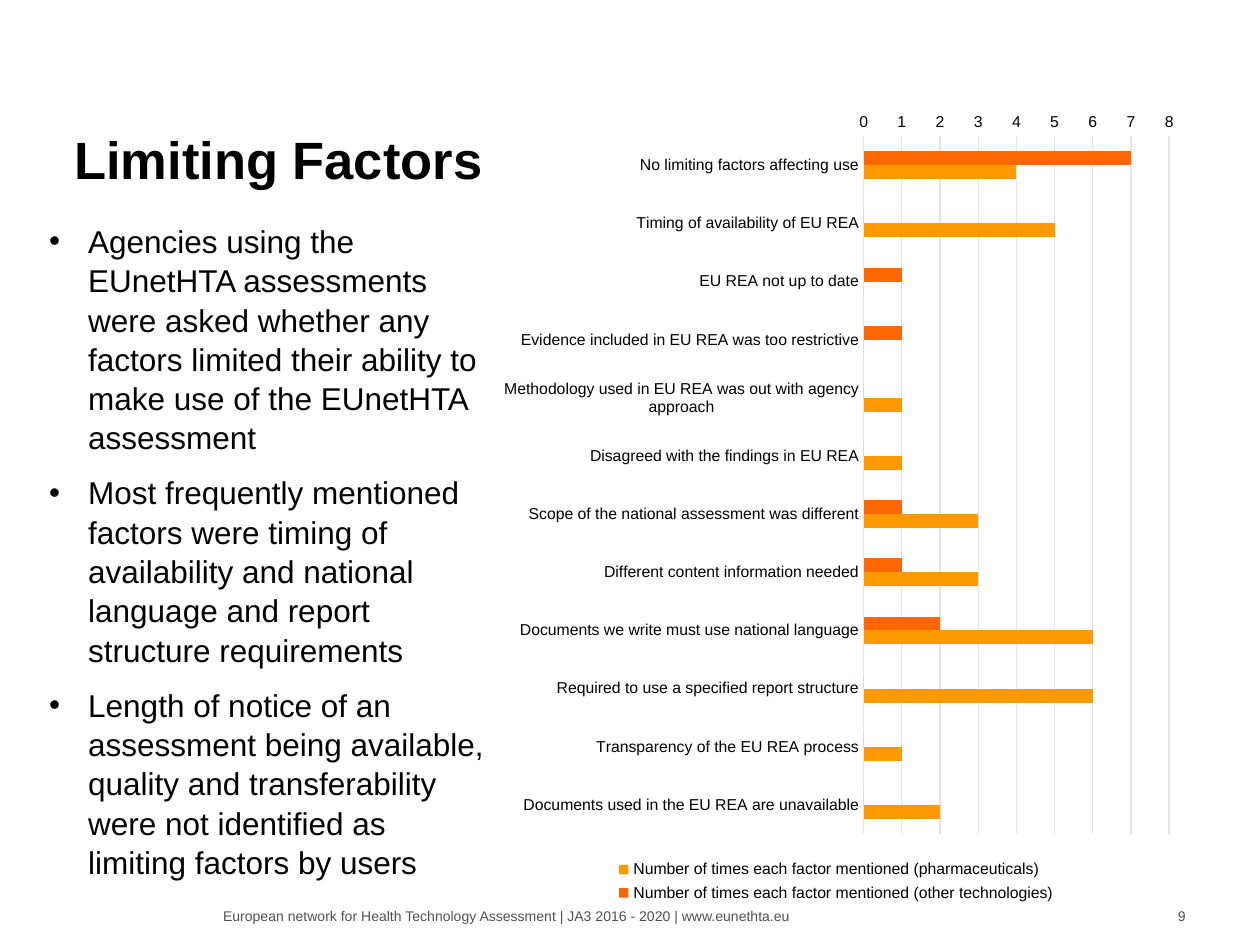
from dataclasses import dataclass

from lxml.etree import SubElement
from pptx import Presentation
from pptx.chart.data import CategoryChartData
from pptx.dml.color import RGBColor
from pptx.enum.chart import XL_CHART_TYPE, XL_LEGEND_POSITION, XL_TICK_MARK
from pptx.enum.text import MSO_ANCHOR, PP_ALIGN
from pptx.oxml.ns import qn
from pptx.util import Inches, Pt


@dataclass(frozen=True)
class Theme:
    face: str = "Arial"
    ink: str = "000000"
    gray: str = "505050"
    rule: str = "E5E5E5"
    other: str = "FF6600"
    pharma: str = "FF9900"
    title: int = 30
    body: int = 18
    label: int = 9
    foot: int = 8


THEME = Theme()

POINTS = [
    "Agencies using the EUnetHTA assessments were asked whether any factors "
    "limited their ability to make use of the EUnetHTA assessment",
    "Most frequently mentioned factors were timing of availability and "
    "national language and report structure requirements",
    "Length of notice of an assessment being available, quality and "
    "transferability were not identified as limiting factors by users",
]

# Factor: mentions for other technologies, mentions for pharmaceuticals
FACTORS = {
    "No limiting factors affecting use": (7, 4),
    "Timing of availability of EU REA": (0, 5),
    "EU REA not up to date": (1, 0),
    "Evidence included in EU REA was too restrictive": (1, 0),
    "Methodology used in EU REA was out with agency approach": (0, 1),
    "Disagreed with the findings in EU REA": (0, 1),
    "Scope of the national assessment was different": (1, 3),
    "Different content information needed": (1, 3),
    "Documents we write must use national language": (2, 6),
    "Required to use a specified report structure": (0, 6),
    "Transparency of the EU REA process": (0, 1),
    "Documents used in the EU REA are unavailable": (0, 2),
}
SERIES = {
    "Number of times each factor mentioned (other technologies)": THEME.other,
    "Number of times each factor mentioned (pharmaceuticals)": THEME.pharma,
}


def put(item, form):
    for name, value in form.items():
        setattr(item, name, value)


def style(font, size, color, bold=False):
    put(font, {"name": THEME.face, "size": Pt(size), "bold": bold})
    font.color.rgb = RGBColor.from_string(color)


def add_text(slide, area, lines, size, color, bold=False, form=None,
             anchor=MSO_ANCHOR.TOP, bullet=False):
    frame = slide.shapes.add_textbox(*map(Inches, area)).text_frame
    put(frame, {"word_wrap": True, "vertical_anchor": anchor,
                "margin_left": 0, "margin_right": 0,
                "margin_top": 0, "margin_bottom": 0})
    for i, line in enumerate(lines):
        para = frame.add_paragraph() if i else frame.paragraphs[0]
        para.text = line
        if bullet:
            add_bullet(para)
        put(para, form or {})
        if i:
            para.space_before = Pt(9)
        style(para.font, size, color, bold)
        style(para.runs[0].font, size, color, bold)


def add_bullet(para):
    props = para._p.get_or_add_pPr()
    indent = Inches(0.31)
    props.set("marL", str(indent))
    props.set("indent", str(-indent))
    SubElement(props, qn("a:buFont"), typeface=THEME.face)
    SubElement(props, qn("a:buChar"), char="•")


def set_plot(chart, area):
    """Fix the inner plot area, in fractions of the chart."""
    plot = chart._chartSpace.chart.plotArea
    for old in plot.findall(qn("c:layout")):
        plot.remove(old)
    layout = SubElement(plot, qn("c:layout"))
    plot.insert(0, layout)
    manual = SubElement(layout, qn("c:manualLayout"))
    rules = {"layoutTarget": "inner", "xMode": "edge", "yMode": "edge"}
    rules.update(zip("xywh", map(str, area)))
    for tag, value in rules.items():
        SubElement(manual, qn(f"c:{tag}"), val=value)


def draw_line(line, color):
    line.color.rgb = RGBColor.from_string(color)
    line.width = Pt(0.75)


def add_bars(slide, area):
    data = CategoryChartData(number_format="0")
    data.categories = list(FACTORS)
    for name, values in zip(SERIES, zip(*FACTORS.values())):
        data.add_series(name, values)
    chart = slide.shapes.add_chart(
        XL_CHART_TYPE.BAR_CLUSTERED, *map(Inches, area), data).chart
    put(chart, {"has_title": False, "has_legend": True})
    style(chart.font, 10, THEME.gray)
    set_plot(chart, (0.54, 0.05, 0.44, 0.86))

    # Bars
    plot = chart.plots[0]
    put(plot, {"gap_width": 219, "overlap": 0, "vary_by_categories": False})
    for bars, color in zip(plot.series, SERIES.values()):
        bars.format.fill.solid()
        bars.format.fill.fore_color.rgb = RGBColor.from_string(color)

    # Axes
    cats, vals = chart.category_axis, chart.value_axis
    for axis in (cats, vals):
        put(axis, {"major_tick_mark": XL_TICK_MARK.NONE,
                   "minor_tick_mark": XL_TICK_MARK.NONE})
        style(axis.tick_labels.font, THEME.label, THEME.ink)
    put(cats, {"reverse_order": True, "has_major_gridlines": False})
    put(vals, {"minimum_scale": 0, "maximum_scale": 8, "major_unit": 1,
               "has_major_gridlines": True})
    draw_line(cats.format.line, THEME.rule)
    draw_line(vals.major_gridlines.format.line, THEME.rule)
    vals.format.line.fill.background()

    # Legend
    put(chart.legend, {"position": XL_LEGEND_POSITION.BOTTOM,
                       "include_in_layout": False})
    style(chart.legend.font, THEME.label, THEME.ink)


def main():
    deck = Presentation()
    put(deck, {"slide_width": Inches(10), "slide_height": Inches(7.5)})
    slide = deck.slides.add_slide(deck.slide_layouts[6])

    # Footer
    add_text(slide, (1.77, 7.2, 4.69, 0.13),
             ["European network for Health Technology Assessment | "
              "JA3 2016 - 2020 | www.eunethta.eu"], THEME.foot, THEME.gray)
    add_text(slide, (8.74, 7.2, 0.67, 0.13), ["9"], THEME.foot, THEME.gray,
             form={"alignment": PP_ALIGN.RIGHT})

    # Title and points
    add_text(slide, (0.59, 0.49, 8.82, 1.03), ["Limiting Factors"],
             THEME.title, THEME.ink, bold=True,
             form={"line_spacing": 0.95}, anchor=MSO_ANCHOR.BOTTOM)
    add_text(slide, (0.39, 1.75, 3.51, 5.1), POINTS, THEME.body, THEME.ink,
             form={"line_spacing": 1.04}, bullet=True)

    # Chart
    add_bars(slide, (3.88, 0.76, 5.51, 6.44))
    deck.save("out.pptx")


if __name__ == "__main__":
    main()
